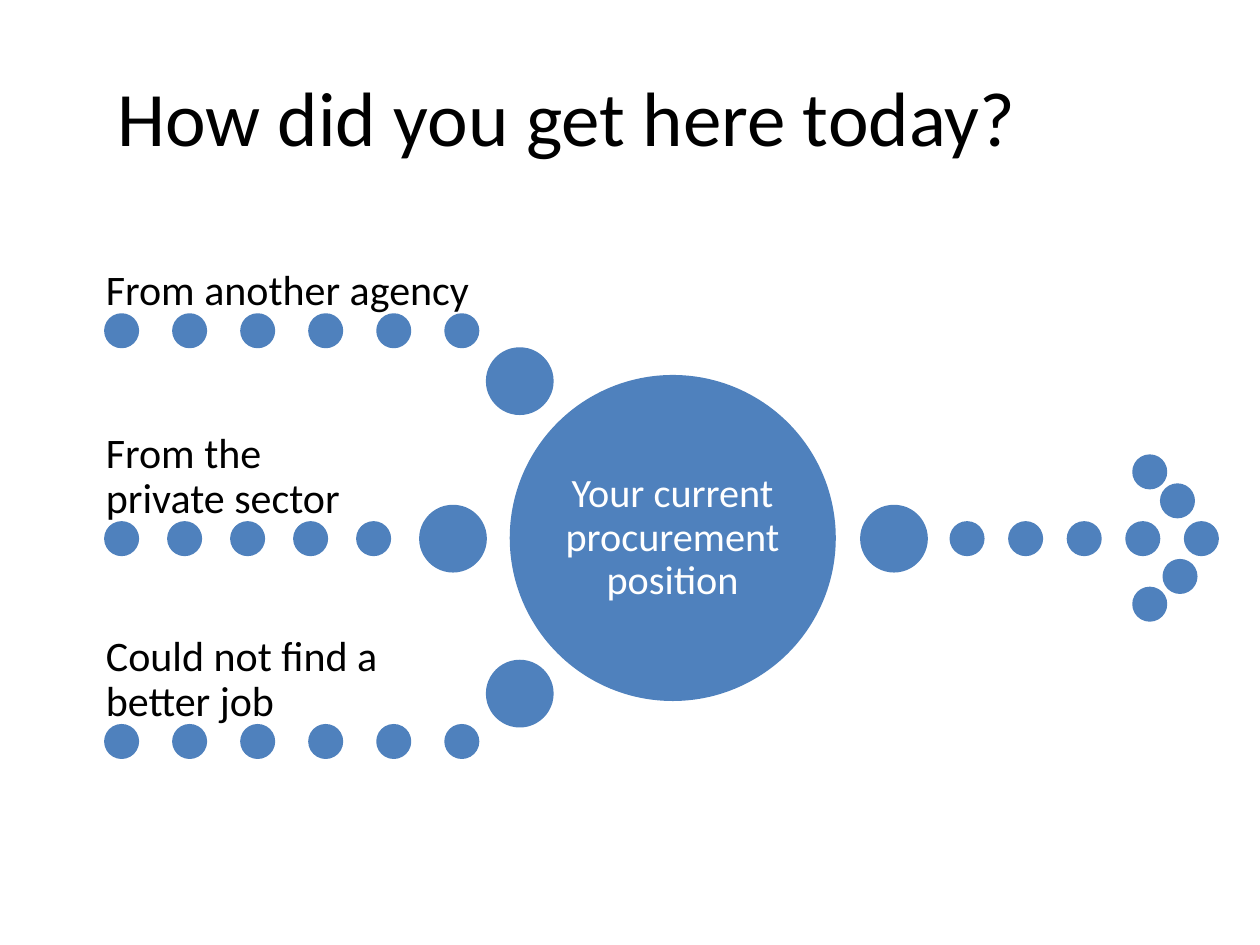
import pptx
import pptx.util
import pptx.dml.color
import pptx.enum.shapes
import pptx.enum.text

Inches = pptx.util.Inches
ANCHOR = pptx.enum.text.MSO_ANCHOR
ALIGN = pptx.enum.text.PP_ALIGN
BLUE = "4F81BD"
DOT, HUB, CORE = 0.25, 0.51, 2.56
LEFT = 0.84
MIDDLE = 4.15


def write(frame, text, size, color, anchor, align, inset, spacing):
    frame.word_wrap = True
    frame.vertical_anchor = anchor
    frame.margin_left = frame.margin_right = Inches(inset)
    frame.margin_top = frame.margin_bottom = Inches(inset)
    paragraph = frame.paragraphs[0]
    paragraph.alignment = align
    paragraph.line_spacing = spacing
    run = paragraph.add_run()
    run.text = text
    run.font.name = "Calibri"
    run.font.size = pptx.util.Pt(size)
    run.font.color.rgb = pptx.dml.color.RGBColor.from_string(color)


def add_circle(left, top, diameter):
    circle = slide.shapes.add_shape(
        pptx.enum.shapes.MSO_SHAPE.OVAL,
        Inches(left), Inches(top), Inches(diameter), Inches(diameter))
    circle.shadow.inherit = False
    blue = pptx.dml.color.RGBColor.from_string(BLUE)
    circle.fill.solid()
    circle.fill.fore_color.rgb = blue
    circle.line.color.rgb = blue
    circle.line.width = pptx.util.Pt(2)
    return circle


prs = pptx.Presentation()
prs.slide_width, prs.slide_height = Inches(10), Inches(7.5)
slide = prs.slides.add_slide(prs.slide_layouts[5])

title = slide.shapes.title
title.left, title.top = Inches(0.83), Inches(0.29)
title.width, title.height = Inches(8.83), Inches(1.25)
write(title.text_frame, "How did you get here today?", 44, "000000",
      ANCHOR.MIDDLE, ALIGN.LEFT, 0.1, 1.0)

# Arrow leading out of the current position: shaft, then head
for step in range(5):
    add_circle(7.55 + step * 0.465, MIDDLE, DOT)
add_circle(6.84, 4.02, HUB)
for left, top in [(9, 3.62), (9, 4.67), (9.22, 3.85), (9.24, 4.45)]:
    add_circle(left, top, DOT)

position = add_circle(4.06, 2.99, CORE)
write(position.text_frame, "Your current procurement position", 23, "FFFFFF",
      ANCHOR.MIDDLE, ALIGN.CENTER, 0.03, 0.9)

# Routes in: label, row top, dot count, dot pitch, hub left, hub top
routes = [
    ("From another agency", 2.5, 6, 0.54, 3.87, 2.77),
    ("From the private sector", MIDDLE, 5, 0.5, 3.34, 4.02),
    ("Could not find a better job", 5.76, 6, 0.54, 3.87, 5.25),
]
for label, row_top, count, pitch, hub_left, hub_top in routes:
    add_circle(hub_left, hub_top, HUB)
    for step in range(count):
        add_circle(LEFT + step * pitch, row_top, DOT)
    label_width = (count - 1) * pitch + DOT
    caption = slide.shapes.add_textbox(
        Inches(LEFT), Inches(row_top - 0.65), Inches(label_width), Inches(0.65))
    write(caption.text_frame, label, 24, "000000",
          ANCHOR.BOTTOM, ALIGN.LEFT, 0, 0.9)

prs.save("out.pptx")
